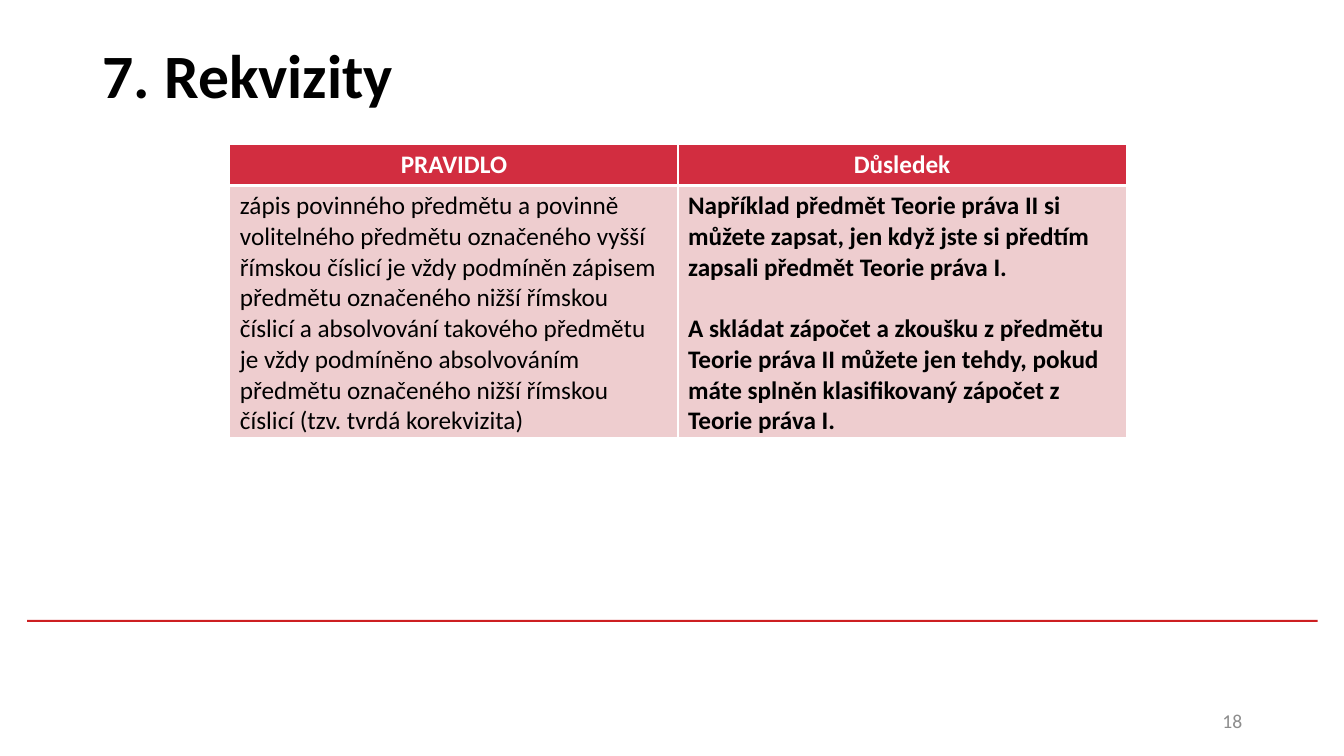
from dataclasses import dataclass

import pptx
import pptx.dml.color
import pptx.enum.shapes
import pptx.enum.text
import pptx.oxml
import pptx.oxml.ns
import pptx.util
from pptx.util import Inches

ALIGN = pptx.enum.text.PP_ALIGN
MIDDLE = pptx.enum.text.MSO_ANCHOR.MIDDLE
FONT = "Calibri"
BLACK, WHITE, GREY = "000000", "FFFFFF", "8C8C8C"
RULE_RED, HEADER_RED, BODY_PINK = "CD1F21", "D22D40", "EECDCF"


@dataclass(frozen=True)
class Entry:
    paragraphs: tuple[str, ...]
    fill: str
    color: str = BLACK
    bold: bool = True
    align: ALIGN = ALIGN.LEFT
    bottom_width: float = 1


@dataclass(frozen=True)
class Label:
    text: str
    left: float
    top: float
    width: float
    height: float
    size: float
    color: str
    bold: bool = False
    align: ALIGN = ALIGN.LEFT


def header(text: str) -> Entry:
    return Entry((text,), HEADER_RED, WHITE, align=ALIGN.CENTER, bottom_width=3)


LABELS = (
    Label("7. Rekvizity", 0.92, 0.01, 12.15, 1.45, 44, BLACK, bold=True),
    Label("18", 9.42, 6.95, 3, 0.4, 14, GREY, align=ALIGN.RIGHT),
)

RULES = (
    (header("PRAVIDLO"), header("Důsledek")),
    (
        Entry(
            (
                "zápis povinného předmětu a povinně volitelného předmětu "
                "označeného vyšší římskou číslicí je vždy podmíněn zápisem "
                "předmětu označeného nižší římskou číslicí a absolvování "
                "takového předmětu je vždy podmíněno absolvováním předmětu "
                "označeného nižší římskou číslicí (tzv. tvrdá korekvizita)",
            ),
            BODY_PINK,
            bold=False,
        ),
        Entry(
            (
                "Například předmět Teorie práva II si můžete zapsat, jen když "
                "jste si předtím zapsali předmět Teorie práva I.",
                "A skládat zápočet a zkoušku z předmětu Teorie práva II můžete "
                "jen tehdy, pokud máte splněn klasifikovaný zápočet z Teorie "
                "práva I.",
            ),
            BODY_PINK,
        ),
    ),
)
ROW_HEIGHTS = (0.41, 2.5)


def rgb(color: str) -> pptx.dml.color.RGBColor:
    return pptx.dml.color.RGBColor.from_string(color)


def write(frame, *paragraphs: str, size: float, color: str, bold: bool = False,
          align: ALIGN = ALIGN.LEFT, gap: float = 0) -> None:
    frame.word_wrap = True
    for index, text in enumerate(paragraphs):
        paragraph = frame.add_paragraph() if index else frame.paragraphs[0]
        paragraph.text = text
        paragraph.alignment = align
        if index:
            paragraph.space_before = pptx.util.Pt(gap)
        font = paragraph.font
        font.name, font.size, font.bold = FONT, pptx.util.Pt(size), bold
        font.color.rgb = rgb(color)


def add_label(slide, label: Label) -> None:
    box = slide.shapes.add_textbox(Inches(label.left), Inches(label.top),
                                   Inches(label.width), Inches(label.height))
    box.text_frame.vertical_anchor = MIDDLE
    write(box.text_frame, label.text, size=label.size, color=label.color,
          bold=label.bold, align=label.align)


def add_borders(cell, bottom_width: float) -> None:
    properties = cell._tc.get_or_add_tcPr()
    sides = {"lnL": 1, "lnR": 1, "lnT": 1, "lnB": bottom_width}
    for position, (side, width) in enumerate(sides.items()):
        border = pptx.oxml.parse_xml(
            f'<a:{side} {pptx.oxml.ns.nsdecls("a")} w="{pptx.util.Pt(width)}">'
            f'<a:solidFill><a:srgbClr val="{WHITE}"/></a:solidFill></a:{side}>'
        )
        properties.insert(position, border)


def fill_cell(cell, entry: Entry) -> None:
    cell.fill.solid()
    cell.fill.fore_color.rgb = rgb(entry.fill)
    add_borders(cell, entry.bottom_width)
    write(cell.text_frame, *entry.paragraphs, size=18, color=entry.color,
          bold=entry.bold, align=entry.align, gap=22)


def add_rules_table(slide) -> None:
    table = slide.shapes.add_table(
        len(RULES), len(RULES[0]), Inches(2.28), Inches(1.43),
        Inches(8.89), Inches(sum(ROW_HEIGHTS))).table
    for row, height, entries in zip(table.rows, ROW_HEIGHTS, RULES):
        row.height = Inches(height)
        for cell, entry in zip(row.cells, entries):
            fill_cell(cell, entry)


def add_footer_rule(slide) -> None:
    footer_rule = slide.shapes.add_shape(
        pptx.enum.shapes.MSO_SHAPE.RECTANGLE,
        Inches(0.27), Inches(6.15), Inches(12.8), Inches(0.02))
    footer_rule.shadow.inherit = False
    footer_rule.fill.solid()
    footer_rule.fill.fore_color.rgb = rgb(RULE_RED)
    footer_rule.line.fill.background()


def main() -> None:
    presentation = pptx.Presentation()
    presentation.slide_width = Inches(13.33)
    presentation.slide_height = Inches(7.5)
    slide = presentation.slides.add_slide(presentation.slide_layouts[6])
    add_footer_rule(slide)
    for label in LABELS:
        add_label(slide, label)
    add_rules_table(slide)
    presentation.save("out.pptx")


if __name__ == "__main__":
    main()
